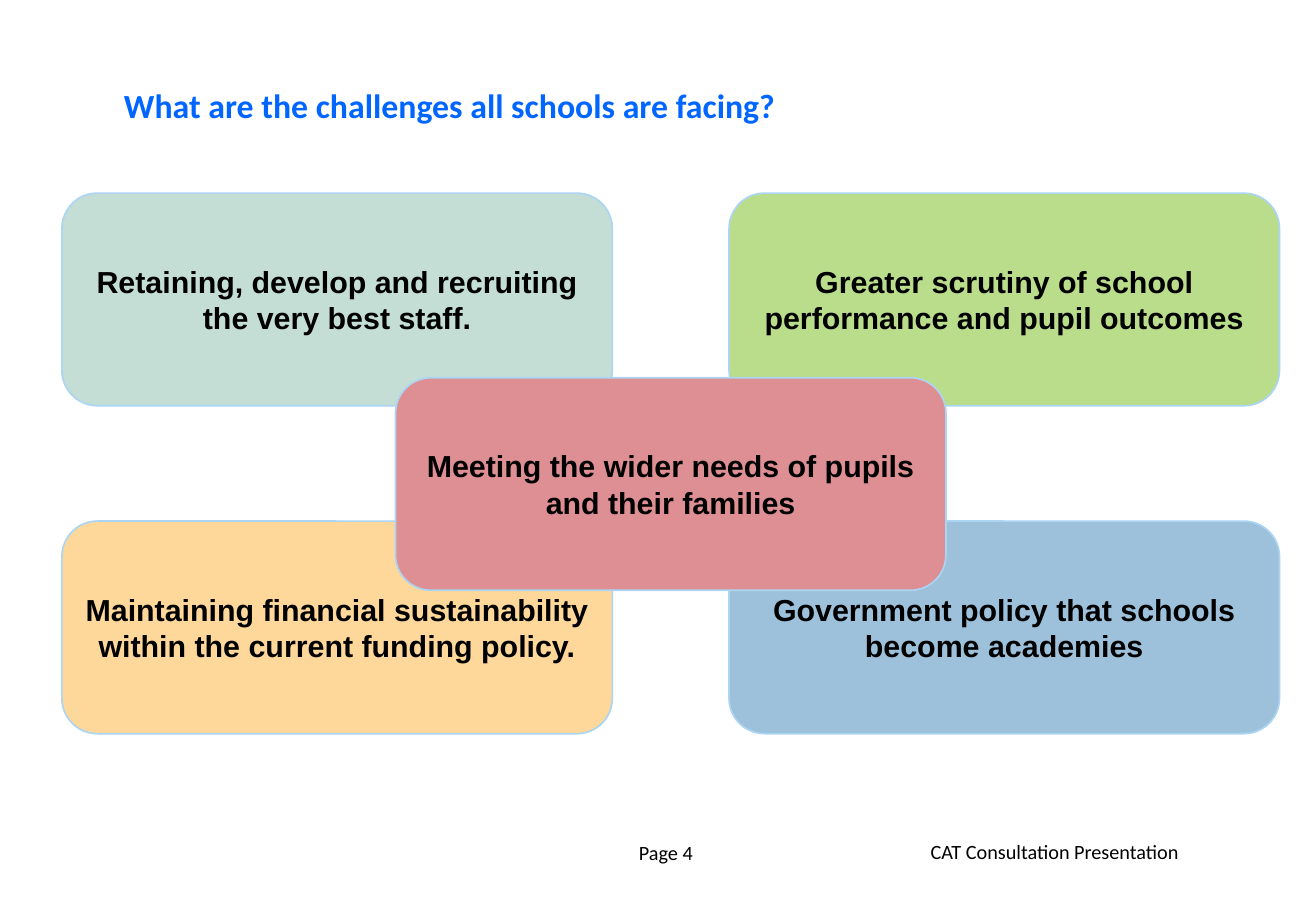
from pptx import Presentation
from pptx.dml.color import RGBColor
from pptx.enum.shapes import MSO_SHAPE as Shape
from pptx.enum.text import MSO_ANCHOR as Anchor, PP_ALIGN as Align
from pptx.util import Inches, Pt

BLACK = RGBColor(0x00, 0x00, 0x00)
BLUE = RGBColor(0x00, 0x66, 0xFF)
EDGE = RGBColor(0xAB, 0xD5, 0xF3)
SAGE = RGBColor(0xC4, 0xDE, 0xD6)
SKY = RGBColor(0x9D, 0xC1, 0xDB)
LIME = RGBColor(0xBA, 0xDD, 0x8C)
SAND = RGBColor(0xFE, 0xD8, 0x9A)
ROSE = RGBColor(0xDE, 0x8F, 0x94)

CARD_W, CARD_H = 4.53, 1.75


def write(shape, text, size, face, color, align, anchor, bold=False):
    frame = shape.text_frame
    frame.word_wrap = True
    frame.vertical_anchor = anchor
    para = frame.paragraphs[0]
    para.text = text
    para.alignment = align
    font = para.font
    font.size, font.name, font.bold = Pt(size), face, bold
    font.color.rgb = color


def add_title(slide, box, text):
    title = slide.shapes.title
    title.left, title.top, title.width, title.height = map(Inches, box)
    write(title, text, 20, "Calibri", BLUE, Align.LEFT, Anchor.TOP, True)


def add_card(slide, left, top, fill, text):
    card = slide.shapes.add_shape(
        Shape.ROUNDED_RECTANGLE, *map(Inches, (left, top, CARD_W, CARD_H)))
    card.shadow.inherit = False
    card.fill.solid()
    card.fill.fore_color.rgb = fill
    card.line.color.rgb = EDGE
    card.line.width = Pt(1)
    write(card, text, 18, "Arial", BLACK, Align.CENTER, Anchor.MIDDLE, True)


def add_cards(slide, box):
    """Four cards in the corners of the box and one over its middle."""
    left, top, width, height = box
    right, low = left + width - CARD_W, top + height - CARD_H
    mid = left + (width - CARD_W) / 2
    cards = [
        (left, top, SAGE,
         "Retaining, develop and recruiting the very best staff."),
        (right, low, SKY,
         "Government policy that schools become academies"),
        (right, top, LIME,
         "Greater scrutiny of school performance and pupil outcomes"),
        (left, low, SAND,
         "Maintaining financial sustainability within the current "
         "funding policy."),
        (mid, 3.11, ROSE,
         "Meeting the wider needs of pupils and their families"),
    ]
    for card in cards:
        add_card(slide, *card)


def add_note(slide, box, text, align):
    note = slide.shapes.add_textbox(*map(Inches, box))
    write(note, text, 12, "Calibri", BLACK, align, Anchor.TOP)


def main():
    deck = Presentation()
    deck.slide_width, deck.slide_height = Inches(10.83), Inches(7.5)
    slide = deck.slides.add_slide(deck.slide_layouts[5])

    # Footer
    add_note(slide, (4.62, 6.87, 1.72, 0.3), "Page 4", Align.CENTER)
    add_note(slide, (7.56, 6.86, 2.5, 0.3),
             "CAT Consultation Presentation", Align.LEFT)

    # Heading and challenges
    add_title(slide, (0.92, 0.65, 9.2, 0.5),
              "What are the challenges all schools are facing?")
    add_cards(slide, (0.51, 1.59, 10.02, 4.45))

    deck.save("out.pptx")


if __name__ == "__main__":
    main()
